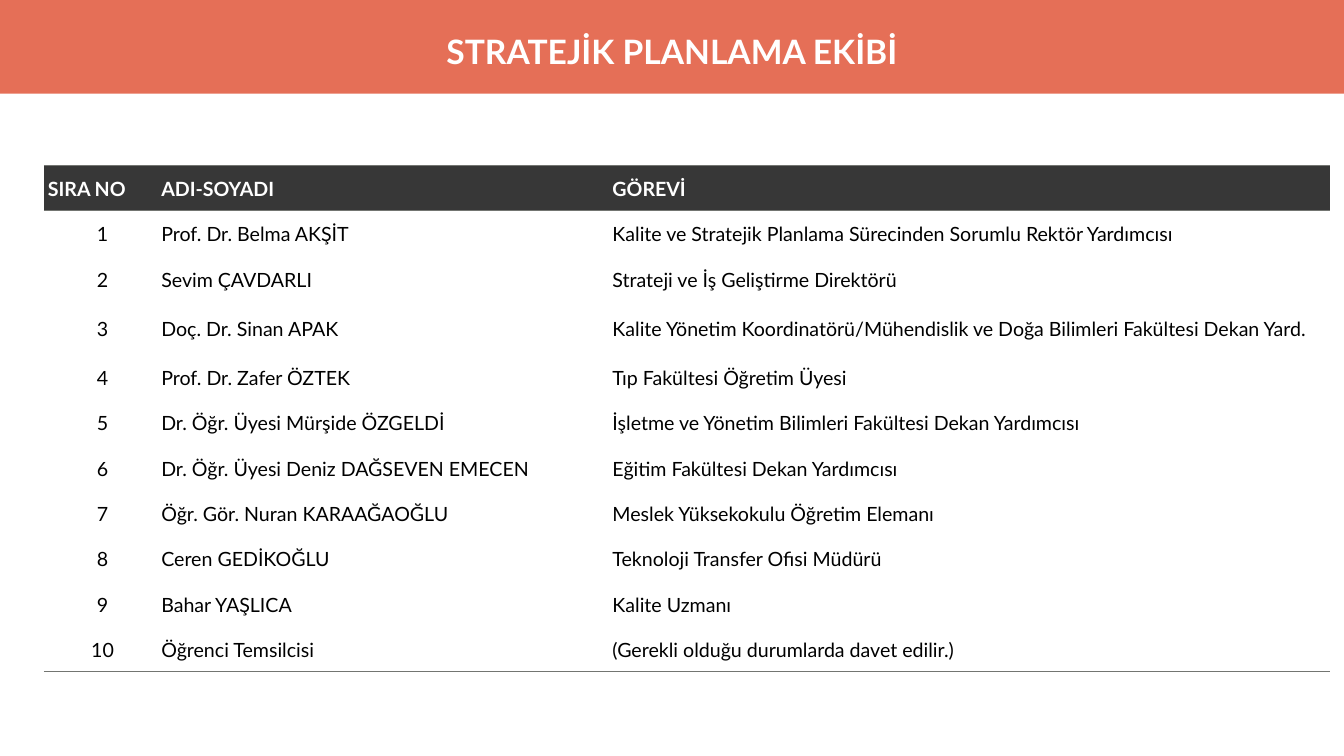
from lxml.etree import SubElement
from pptx import Presentation
from pptx.dml.color import RGBColor
from pptx.enum.shapes import MSO_SHAPE as SHAPE
from pptx.enum.text import MSO_ANCHOR as ANCHOR, MSO_AUTO_SIZE as AUTO, PP_ALIGN as ALIGN
from pptx.oxml.ns import qn
from pptx.util import Inches, Pt

FONT = "Lato"
WHITE, BLACK, CORAL, DARK, RULE = "FFFFFF", "000000", "E56F57", "373737", "737571"
NO_GRID_STYLE = "{2D5ABB26-0587-4C30-8999-92F81FD0307C}"
SLIDE_W, SLIDE_H = 26.66, 15
COL_WIDTHS = [2.25, 8.95, 14.32]
ROW_H, TALL_ROW, TALL_ROW_H = 0.9, 3, 1.05

HEADERS = ("SIRA NO", "ADI-SOYADI", "GÖREVİ")
MEMBERS = [
    ("Prof. Dr. Belma AKŞİT", "Kalite ve Stratejik Planlama Sürecinden Sorumlu Rektör Yardımcısı"),
    ("Sevim ÇAVDARLI", "Strateji ve İş Geliştirme Direktörü"),
    ("Doç. Dr. Sinan APAK",
     "Kalite Yönetim Koordinatörü/Mühendislik ve Doğa Bilimleri Fakültesi Dekan Yard."),
    ("Prof. Dr. Zafer ÖZTEK", "Tıp Fakültesi Öğretim Üyesi"),
    ("Dr. Öğr. Üyesi Mürşide ÖZGELDİ", "İşletme ve Yönetim Bilimleri Fakültesi Dekan Yardımcısı"),
    ("Dr. Öğr. Üyesi Deniz DAĞSEVEN EMECEN", "Eğitim Fakültesi Dekan Yardımcısı"),
    ("Öğr. Gör. Nuran KARAAĞAOĞLU", "Meslek Yüksekokulu Öğretim Elemanı"),
    ("Ceren GEDİKOĞLU", "Teknoloji Transfer Ofisi Müdürü"),
    ("Bahar YAŞLICA", "Kalite Uzmanı"),
    ("Öğrenci Temsilcisi", "(Gerekli olduğu durumlarda davet edilir.)"),
]


def rgb(color):
    return RGBColor.from_string(color)


def add_run(p, text, size, color, bold):
    r = p.add_run()
    r.text = text
    r.font.name = FONT
    r.font.size = Pt(size)
    r.font.bold = bold
    r.font.color.rgb = rgb(color)


def add_border(cell, side):
    tc_pr = cell._tc.get_or_add_tcPr()
    line = SubElement(tc_pr, qn(f"a:{side}"), w=str(Pt(2)))
    fill = SubElement(line, qn("a:solidFill"))
    SubElement(fill, qn("a:srgbClr"), val=RULE)


def fill_cell(cell, text, color, background, bold, align, borders):
    cell.margin_left = cell.margin_right = cell.margin_top = cell.margin_bottom = 0
    cell.vertical_anchor = ANCHOR.MIDDLE
    for side in borders:
        add_border(cell, side)
    cell.fill.solid()
    cell.fill.fore_color.rgb = rgb(background)
    p = cell.text_frame.paragraphs[0]
    p._p.get_or_add_pPr().set("marL", str(Inches(0.08)))
    p.alignment = align
    p.line_spacing = 1.07
    p.space_after = Pt(8)
    add_run(p, text, 28, color, bold)


def add_team_table(s, x, y, w, h):
    rows = [HEADERS] + [(str(n), *member) for n, member in enumerate(MEMBERS, 1)]
    frame = s.shapes.add_table(len(rows), len(HEADERS), Inches(x), Inches(y), Inches(w), Inches(h))
    table = frame.table
    table.first_row = table.horz_banding = False
    next(frame.element.iter(qn("a:tableStyleId"))).text = NO_GRID_STYLE
    for column, width in zip(table.columns, COL_WIDTHS):
        column.width = Inches(width)
    for i, row in enumerate(rows):
        table.rows[i].height = Inches(TALL_ROW_H if i == TALL_ROW else ROW_H)
        header = i == 0
        borders = ["lnT", "lnB"] if header else ["lnB"] if i == len(rows) - 1 else []
        color, background = (WHITE, DARK) if header else (BLACK, WHITE)
        for j, text in enumerate(row):
            align = ALIGN.LEFT
            if j == 0 and not header:
                align = ALIGN.CENTER
            elif j == 2 and i == TALL_ROW:
                align = ALIGN.JUSTIFY
            fill_cell(table.cell(i, j), text, color, background, header, align, borders)


def add_title_band(s, x, y, w, h):
    band = s.shapes.add_shape(SHAPE.RECTANGLE, Inches(x), Inches(y), Inches(w), Inches(h))
    band.shadow.inherit = False
    band.fill.solid()
    band.fill.fore_color.rgb = rgb(CORAL)
    band.line.fill.background()
    title = s.shapes.add_textbox(Inches(x), Inches(y + 0.57), Inches(w), Inches(0.91))
    tf = title.text_frame
    tf.word_wrap = True
    tf.auto_size = AUTO.SHAPE_TO_FIT_TEXT
    p = tf.paragraphs[0]
    p.alignment = ALIGN.CENTER
    add_run(p, "STRATEJİK PLANLAMA EKİBİ", 48, WHITE, True)


def main():
    prs = Presentation()
    prs.slide_width, prs.slide_height = Inches(SLIDE_W), Inches(SLIDE_H)
    s = prs.slides.add_slide(prs.slide_layouts[6])
    table_h = ROW_H * len(MEMBERS) + TALL_ROW_H
    add_team_table(s, 0.87, 3.28, sum(COL_WIDTHS), table_h)
    add_title_band(s, 0, 0, SLIDE_W, 1.86)
    prs.save("out.pptx")


if __name__ == "__main__":
    main()
